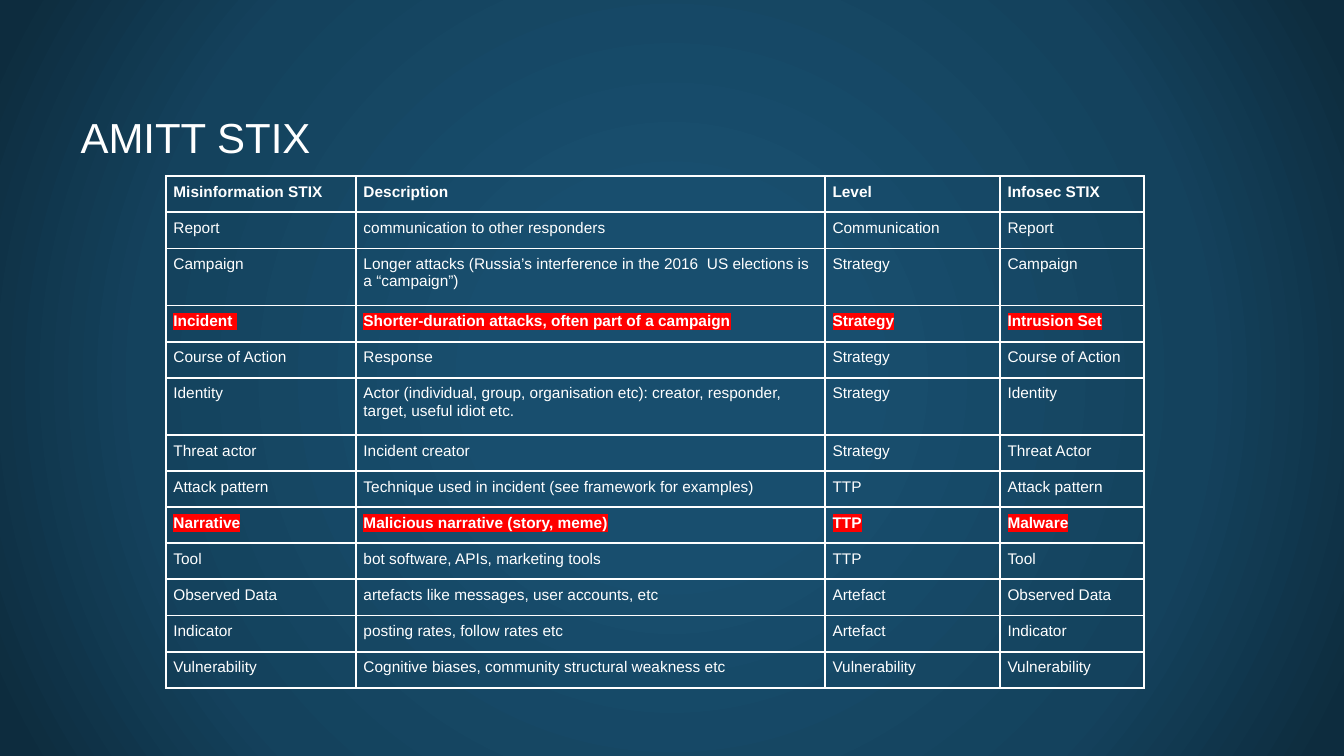
from dataclasses import dataclass

from lxml.etree import SubElement
from pptx import Presentation
from pptx.dml.color import RGBColor
from pptx.enum.text import MSO_ANCHOR as Anchor, PP_ALIGN as Align
from pptx.oxml import parse_xml
from pptx.oxml.ns import nsdecls, qn
from pptx.util import Cm, Pt


@dataclass(frozen=True)
class Theme:
    font: str = "Arial"
    text: str = "FFFFFF"
    highlight: str = "FF0000"
    title_size: int = 30
    table_size: int = 11
    border_width: float = 1.5
    backdrop: tuple = ((0, "184E6E"), (23, "184E6E"), (69, "14425D"),
                       (97, "0D2C3E"), (100, "0D2C3E"))


THEME = Theme()
TITLE_BOX = (1.9, 1.7, 30.12, 3.51)
TABLE_BOX = (4.19, 4.44, 24.65, 12.89)
COLUMN_WIDTHS = (4.79, 11.82, 4.41, 3.63)
ROW_HEIGHT = 0.91
TALL_ROW_HEIGHT = 1.44
TALL_ROWS = ("Campaign", "Identity")
HIGHLIGHTED_ROWS = ("Incident ", "Narrative")
ROWS = (
    ("Misinformation STIX", "Description", "Level", "Infosec STIX"),
    ("Report", "communication to other responders", "Communication", "Report"),
    ("Campaign", "Longer attacks (Russia’s interference in the 2016  US elections is a “campaign”)",
     "Strategy", "Campaign"),
    ("Incident ", "Shorter-duration attacks, often part of a campaign", "Strategy", "Intrusion Set"),
    ("Course of Action", "Response", "Strategy", "Course of Action"),
    ("Identity", "Actor (individual, group, organisation etc): creator, responder, target, useful idiot etc.",
     "Strategy", "Identity"),
    ("Threat actor", "Incident creator", "Strategy", "Threat Actor"),
    ("Attack pattern", "Technique used in incident (see framework for examples)", "TTP", "Attack pattern"),
    ("Narrative", "Malicious narrative (story, meme)", "TTP", "Malware"),
    ("Tool", "bot software, APIs, marketing tools", "TTP", "Tool"),
    ("Observed Data", "artefacts like messages, user accounts, etc", "Artefact", "Observed Data"),
    ("Indicator", "posting rates, follow rates etc", "Artefact", "Indicator"),
    ("Vulnerability", "Cognitive biases, community structural weakness etc", "Vulnerability", "Vulnerability"),
)


def add_run(paragraph, text, size, bold=False, highlighted=False):
    run = paragraph.add_run()
    run.text = text
    run.font.name = THEME.font
    run.font.size = Pt(size)
    run.font.bold = bold
    run.font.color.rgb = RGBColor.from_string(THEME.text)
    if highlighted:
        highlight = parse_xml(f'<a:highlight {nsdecls("a")}><a:srgbClr val="{THEME.highlight}"/></a:highlight>')
        run.font._element.find(qn("a:solidFill")).addnext(highlight)


def set_insets(frame, inset):
    frame.margin_left = frame.margin_right = Cm(inset)
    frame.margin_top = frame.margin_bottom = Cm(inset)


def paint_background(slide):
    slide.background.fill.solid()
    properties = slide._element.find(".//" + qn("p:bgPr"))
    stops = "".join(f'<a:gs pos="{position * 1000}"><a:srgbClr val="{color}"/></a:gs>'
                    for position, color in THEME.backdrop)
    gradient = parse_xml(
        f'<a:gradFill {nsdecls("a")} rotWithShape="1"><a:gsLst>{stops}</a:gsLst><a:path path="circle">'
        '<a:fillToRect l="50000" t="50000" r="50000" b="50000"/></a:path></a:gradFill>')
    properties.replace(properties.find(qn("a:solidFill")), gradient)


def add_title(slide, box):
    title = slide.shapes.title
    title.left, title.top, title.width, title.height = map(Cm, box)
    frame = title.text_frame
    frame.word_wrap = True
    frame.vertical_anchor = Anchor.MIDDLE
    set_insets(frame, 0.13)
    paragraph = frame.paragraphs[0]
    paragraph.alignment = Align.LEFT
    add_run(paragraph, "AMITT STIX", THEME.title_size)


def add_borders(cell):
    properties = cell._tc.get_or_add_tcPr()
    for index, side in enumerate(("lnL", "lnR", "lnT", "lnB")):
        line = SubElement(properties, qn(f"a:{side}"), w=str(Pt(THEME.border_width)))
        fill = SubElement(line, qn("a:solidFill"))
        SubElement(fill, qn("a:srgbClr"), val=THEME.text)
        properties.insert(index, line)


def add_stix_table(slide, box):
    table = slide.shapes.add_table(len(ROWS), len(COLUMN_WIDTHS), *map(Cm, box)).table
    table.horz_banding = False
    for column, width in zip(table.columns, COLUMN_WIDTHS):
        column.width = Cm(width)
    for index, (row, texts) in enumerate(zip(table.rows, ROWS)):
        row.height = Cm(TALL_ROW_HEIGHT if texts[0] in TALL_ROWS else ROW_HEIGHT)
        highlighted = texts[0] in HIGHLIGHTED_ROWS
        for cell, text in zip(row.cells, texts):
            set_insets(cell, 0.18)
            cell.vertical_anchor = Anchor.TOP
            cell.fill.background()
            add_borders(cell)
            add_run(cell.text_frame.paragraphs[0], text, THEME.table_size,
                    bold=index == 0 or highlighted, highlighted=highlighted)


def main():
    presentation = Presentation()
    presentation.slide_width = Cm(33.87)
    presentation.slide_height = Cm(19.05)
    slide = presentation.slides.add_slide(presentation.slide_layouts[5])
    paint_background(slide)
    add_title(slide, TITLE_BOX)
    add_stix_table(slide, TABLE_BOX)
    presentation.save("out.pptx")


if __name__ == "__main__":
    main()
